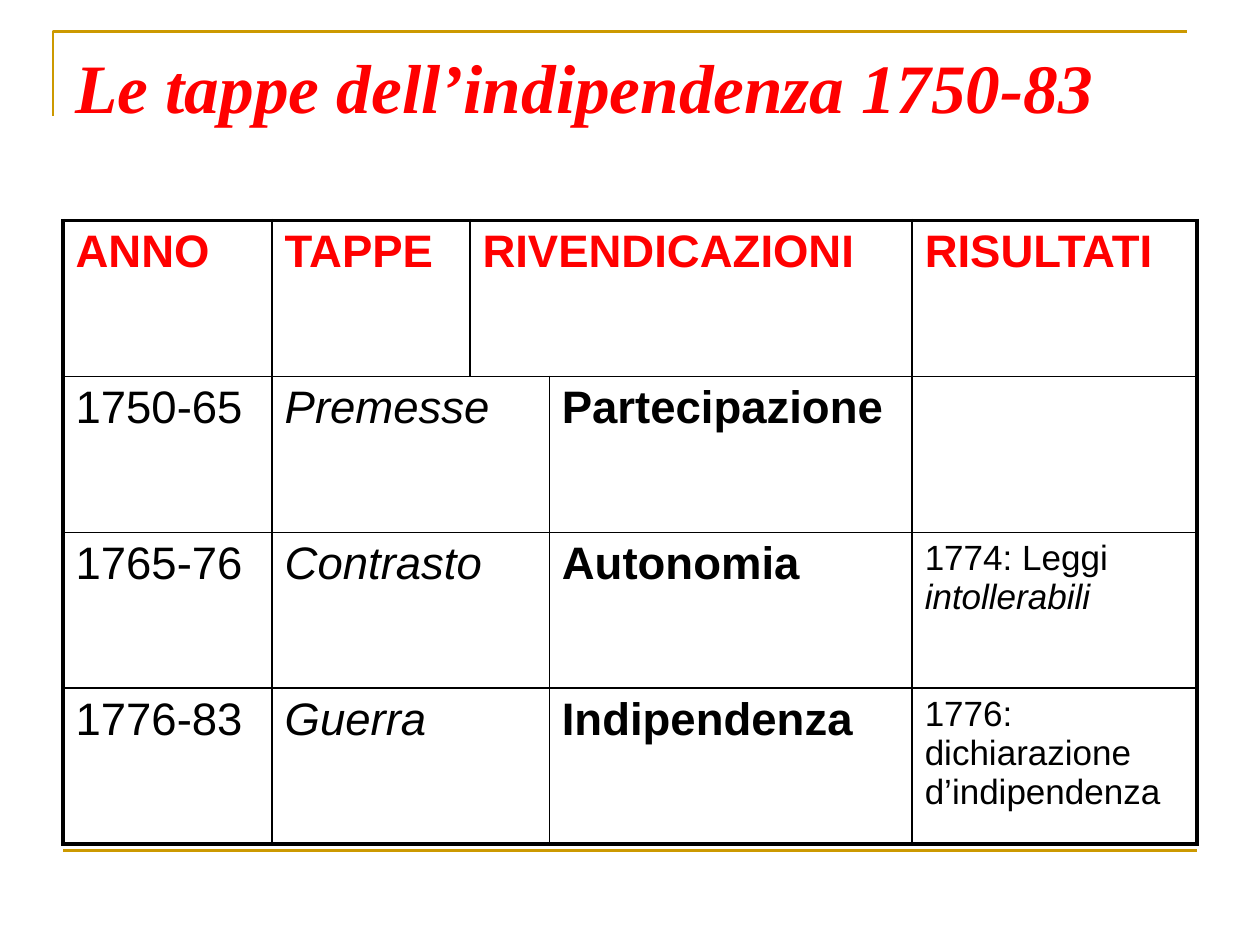
"""Build the slide on the stages of independence, 1750-83."""
from dataclasses import dataclass

from lxml.etree import SubElement
from pptx import Presentation
from pptx.dml.color import RGBColor
from pptx.enum.shapes import MSO_CONNECTOR as Connector
from pptx.oxml.ns import qn
from pptx.util import Inches, Pt

RED, BLACK, GOLD = "FF0000", "000000", "CC9900"
THICK, THIN = 2.25, 1
COLUMNS = (1.66, 1.57, 0.63, 2.88, 2.26)
ROW_COUNT, TABLE_HEIGHT = 4, 4.95


@dataclass(frozen=True)
class Style:
    size: float
    color: str = BLACK
    bold: bool = False
    italic: bool = False
    name: str = "Arial"


@dataclass(frozen=True)
class Entry:
    row: int
    col: int
    text: str
    style: Style
    span: int = 1
    italic_tail: str = ""


TITLE = Style(39.6, RED, True, True, "Times New Roman")
HEADER = Style(26, RED, bold=True)
YEAR = Style(26)
STAGE = Style(26, italic=True)
CLAIM = Style(26, bold=True)
RESULT = Style(20)

ENTRIES = [
    Entry(0, 0, "ANNO", HEADER),
    Entry(0, 1, "TAPPE", HEADER),
    Entry(0, 2, "RIVENDICAZIONI", HEADER, span=2),
    Entry(0, 4, "RISULTATI", HEADER),
    Entry(2, 4, "1774: Leggi ", RESULT, italic_tail="intollerabili"),
    Entry(3, 4, "1776: dichiarazione d’indipendenza", RESULT),
]
PHASES = [
    ("1750-65", "Premesse", "Partecipazione"),
    ("1765-76", "Contrasto", "Autonomia"),
    ("1776-83", "Guerra", "Indipendenza"),
]
for row, (year, stage, claim) in enumerate(PHASES, 1):
    ENTRIES += [
        Entry(row, 0, year, YEAR),
        Entry(row, 1, stage, STAGE, span=2),
        Entry(row, 3, claim, CLAIM),
    ]


def rgb(color: str) -> RGBColor:
    return RGBColor.from_string(color)


def write(tf, text: str, style: Style, italic_tail: str = "") -> None:
    p = tf.paragraphs[0]
    p.add_run().text = text
    font = p.font
    font.name, font.size = style.name, Pt(style.size)
    font.bold, font.italic = style.bold, style.italic
    font.color.rgb = rgb(style.color)
    if italic_tail:
        r = p.add_run()
        r.text = italic_tail
        r.font.italic = True


def draw_frame(slide) -> None:
    builder = slide.shapes.build_freeform(Inches(0.42), Inches(0.92))
    corners = [(Inches(0.42), Inches(0.25)), (Inches(9.42), Inches(0.25))]
    builder.add_line_segments(corners, close=False)
    corner = builder.convert_to_shape()
    corner.fill.background()
    corner.shadow.inherit = False
    rule = slide.shapes.add_connector(
        Connector.STRAIGHT, Inches(0.5), Inches(6.75), Inches(9.5), Inches(6.75))
    SubElement(rule._element.spPr, qn("a:effectLst"))
    for sp in (corner, rule):
        sp.line.color.rgb = rgb(GOLD)
        sp.line.width = Pt(1.5)


def draw_title(slide) -> None:
    box = slide.shapes.add_textbox(Inches(0.5), Inches(0.3), Inches(9), Inches(1.25))
    tf = box.text_frame
    tf.word_wrap = True
    write(tf, "Le tappe dell’indipendenza 1750-83", TITLE)


def set_border(cell, side: str, width: float) -> None:
    tc_pr = cell._tc.get_or_add_tcPr()
    ln = SubElement(tc_pr, qn(f"a:ln{side}"), w=str(Pt(width)))
    fill = SubElement(ln, qn("a:solidFill"))
    SubElement(fill, qn("a:srgbClr"), val=BLACK)


def draw_table(slide) -> None:
    table = slide.shapes.add_table(
        ROW_COUNT, len(COLUMNS), Inches(0.5), Inches(1.75),
        Inches(sum(COLUMNS)), Inches(TABLE_HEIGHT)).table
    table.first_row = table.horz_banding = False
    for column, width in zip(table.columns, COLUMNS):
        column.width = Inches(width)
    for table_row in table.rows:
        table_row.height = Inches(TABLE_HEIGHT / ROW_COUNT)
    for i in range(ROW_COUNT):
        for j in range(len(COLUMNS)):
            cell = table.cell(i, j)
            outer = {"L": j == 0, "R": j == len(COLUMNS) - 1,
                     "T": i == 0, "B": i == ROW_COUNT - 1}
            for side, on_edge in outer.items():
                set_border(cell, side, THICK if on_edge else THIN)
            cell.fill.background()
    for e in ENTRIES:
        cell = table.cell(e.row, e.col)
        if e.span > 1:
            cell.merge(table.cell(e.row, e.col + e.span - 1))
        write(cell.text_frame, e.text, e.style, e.italic_tail)


def main() -> None:
    prs = Presentation()
    prs.slide_width, prs.slide_height = Inches(10), Inches(7.5)
    slide = prs.slides.add_slide(prs.slide_layouts[6])
    draw_frame(slide)
    draw_title(slide)
    draw_table(slide)
    prs.save("out.pptx")


if __name__ == "__main__":
    main()
